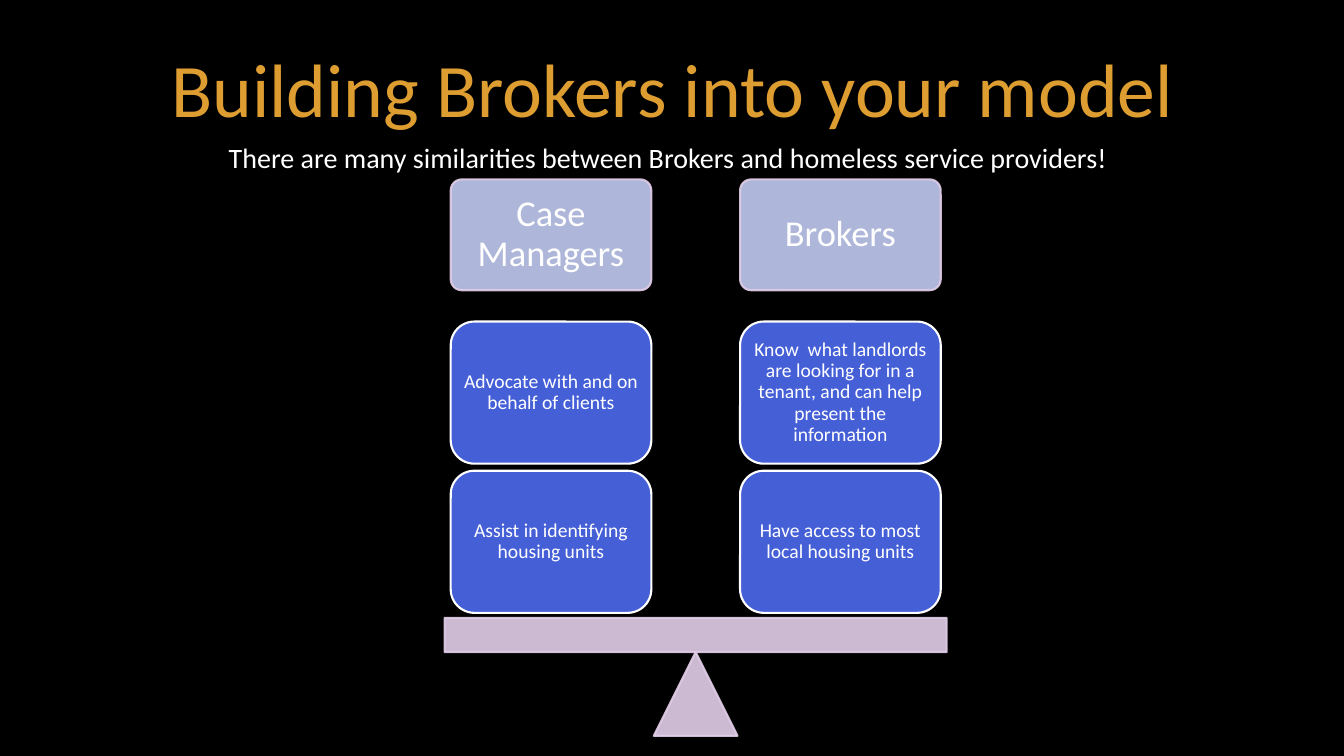
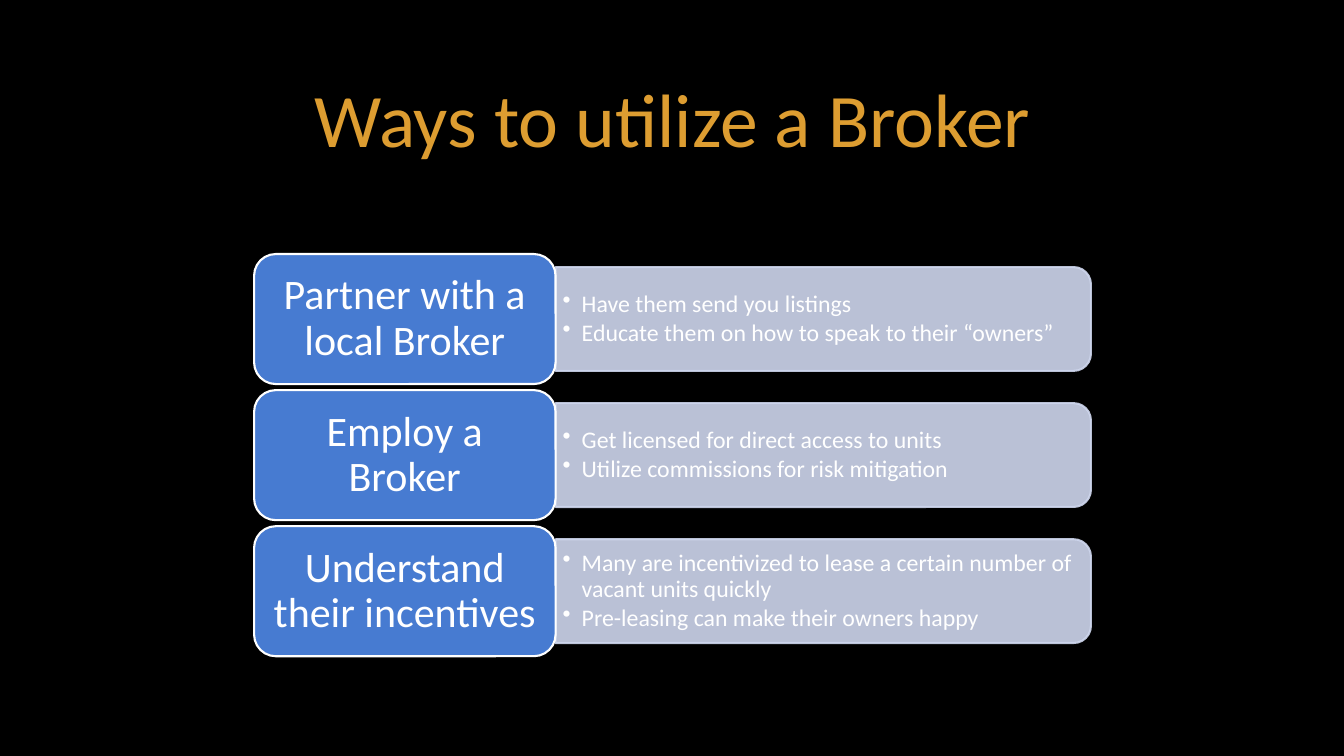
from lxml import etree
from pptx import Presentation
from pptx.dml.color import RGBColor
from pptx.enum.shapes import MSO_SHAPE as Preset
from pptx.enum.text import MSO_ANCHOR as Anchor, PP_ALIGN as Align
from pptx.oxml.ns import qn
from pptx.util import Inches, Pt

FONT = "Calibri"
BLACK, WHITE, GOLD = "000000", "FFFFFF", "DD9D31"
LAVENDER, PINK, INDIGO = "C1CAF1", "E3CEE9", "455FD6"
PALE_BLUE, BLUE = "CFD7EE", "477BD1"

BALANCE_TITLE = "Building Brokers into your model"
BALANCE_SUBTITLE = "There are many similarities between Brokers and homeless service providers!"
BALANCE = [
    ("Case Managers", [
        "Advocate with and on behalf of clients",
        "Assist in identifying housing units",
    ]),
    ("Brokers", [
        "Know  what landlords are looking for in a tenant, and can help present the information",
        "Have access to most local housing units",
    ]),
]

WAYS_TITLE = "Ways to utilize a Broker"
WAYS = [
    ("Partner with a local Broker", [
        "Have them send you listings",
        "Educate them on how to speak to their “owners”",
    ]),
    ("Employ a Broker", [
        "Get licensed for direct access to units",
        "Utilize commissions for risk mitigation",
    ]),
    ("Understand their incentives", [
        "Many are incentivized to lease a certain number of vacant units quickly",
        "Pre-leasing can make their owners happy",
    ]),
]


def rgb(color):
    return RGBColor.from_string(color)


def paint(fill, color, opacity):
    fill.solid()
    fill.fore_color.rgb = rgb(color)
    if opacity < 100:
        for node in fill._xPr.iter(qn("a:srgbClr")):
            if node.find(qn("a:alpha")) is None:
                etree.SubElement(node, qn("a:alpha")).set("val", str(opacity * 1000))


def add_bullet(para, indent):
    props = para._p.get_or_add_pPr()
    props.set("marL", str(Inches(indent)))
    props.set("indent", str(-Inches(indent)))
    etree.SubElement(props, qn("a:buChar")).set("char", "•")


def write(shape, lines, size, color=WHITE, align=Align.CENTER, anchor=Anchor.MIDDLE,
          insets=(0.1, 0.05), spacing=0.9, wrap=True, bullet_indent=0):
    frame = shape.text_frame
    frame.word_wrap = wrap
    frame.vertical_anchor = anchor
    frame.margin_left = frame.margin_right = Inches(insets[0])
    frame.margin_top = frame.margin_bottom = Inches(insets[1])
    for index, line in enumerate(lines):
        para = frame.add_paragraph() if index else frame.paragraphs[0]
        if index:
            para.space_before = Pt(2.5)
        para.alignment = align
        para.line_spacing = spacing
        if bullet_indent:
            add_bullet(para, bullet_indent)
        span = para.add_run()
        span.text = line
        span.font.name = FONT
        span.font.size = Pt(size)
        span.font.color.rgb = rgb(color)


def add_text(page, lines, left, top, width, height, **style):
    box = page.shapes.add_textbox(*map(Inches, (left, top, width, height)))
    write(box, lines, **style)


def add_block(page, preset, left, top, width, height, fill, line=WHITE, opacity=100):
    block = page.shapes.add_shape(preset, *map(Inches, (left, top, width, height)))
    block.shadow.inherit = False
    paint(block.fill, fill, opacity)
    block.line.width = Pt(1.5)
    paint(block.line.fill, line, opacity)
    return block


def add_page(deck, title, title_top):
    page = deck.slides.add_slide(deck.slide_layouts[6])
    add_text(page, [title], 1.45, title_top, 10.44, 1.01, size=54, color=GOLD,
             anchor=Anchor.TOP, spacing=1, wrap=False)
    return page


def build_balance(deck):
    page = add_page(deck, BALANCE_TITLE, 0.37)
    add_text(page, [BALANCE_SUBTITLE], 1.63, 1.34, 9.99, 0.44, size=20,
             anchor=Anchor.TOP, spacing=1)

    left, column_step, width = 4.47, 2.87, 1.99
    head_top, head_height = 1.78, 1.1
    tile_top, tile_step, tile_height = 3.19, 1.48, 1.41
    beam_top, beam_height, beam_overhang, pivot = 6.13, 0.34, 0.06, 0.83

    beam_width = column_step + width + 2 * beam_overhang
    center = left - beam_overhang + beam_width / 2
    add_block(page, Preset.ISOSCELES_TRIANGLE, center - pivot / 2, beam_top + beam_height,
              pivot, pivot, PINK, PINK, 90)
    add_block(page, Preset.RECTANGLE, left - beam_overhang, beam_top,
              beam_width, beam_height, PINK, PINK, 90)

    for column, (heading, tiles) in enumerate(BALANCE):
        x = left + column * column_step
        head = add_block(page, Preset.ROUNDED_RECTANGLE, x, head_top, width, head_height,
                         LAVENDER, PINK, 90)
        head.adjustments[0] = 0.1
        write(head, [heading], size=26, insets=(0.11, 0.11))
        for row, text in enumerate(tiles):
            tile = add_block(page, Preset.ROUNDED_RECTANGLE, x, tile_top + row * tile_step,
                             width, tile_height, INDIGO)
            write(tile, [text], size=14, insets=(0.06, 0.06))


def build_ways(deck):
    page = add_page(deck, WAYS_TITLE, 0.66)
    left, top, row_step = 2.52, 2.52, 1.35
    card_width, card_height = 2.99, 1.29
    bar_length, bar_height, text_height = 5.31, 1.03, 0.93
    bar_left = left + card_width

    for row, (heading, points) in enumerate(WAYS):
        y = top + row * row_step
        middle = y + card_height / 2
        bar = add_block(page, Preset.ROUND_2_SAME_RECTANGLE,
                        bar_left + (bar_length - bar_height) / 2, middle - bar_length / 2,
                        bar_height, bar_length, PALE_BLUE, PALE_BLUE, 90)
        bar.rotation = 90
        add_text(page, points, bar_left, middle - text_height / 2, bar_length - 0.05,
                 text_height, size=17, align=Align.LEFT, insets=(0.07, 0.04),
                 bullet_indent=0.19)
        card = add_block(page, Preset.ROUNDED_RECTANGLE, left, y, card_width, card_height, BLUE)
        write(card, [heading], size=30, insets=(0.12, 0.06))


def main():
    deck = Presentation()
    deck.slide_width, deck.slide_height = Inches(13.33), Inches(7.5)
    paint(deck.slide_master.background.fill, BLACK, 100)
    build_balance(deck)
    build_ways(deck)
    deck.save("out.pptx")


if __name__ == "__main__":
    main()
